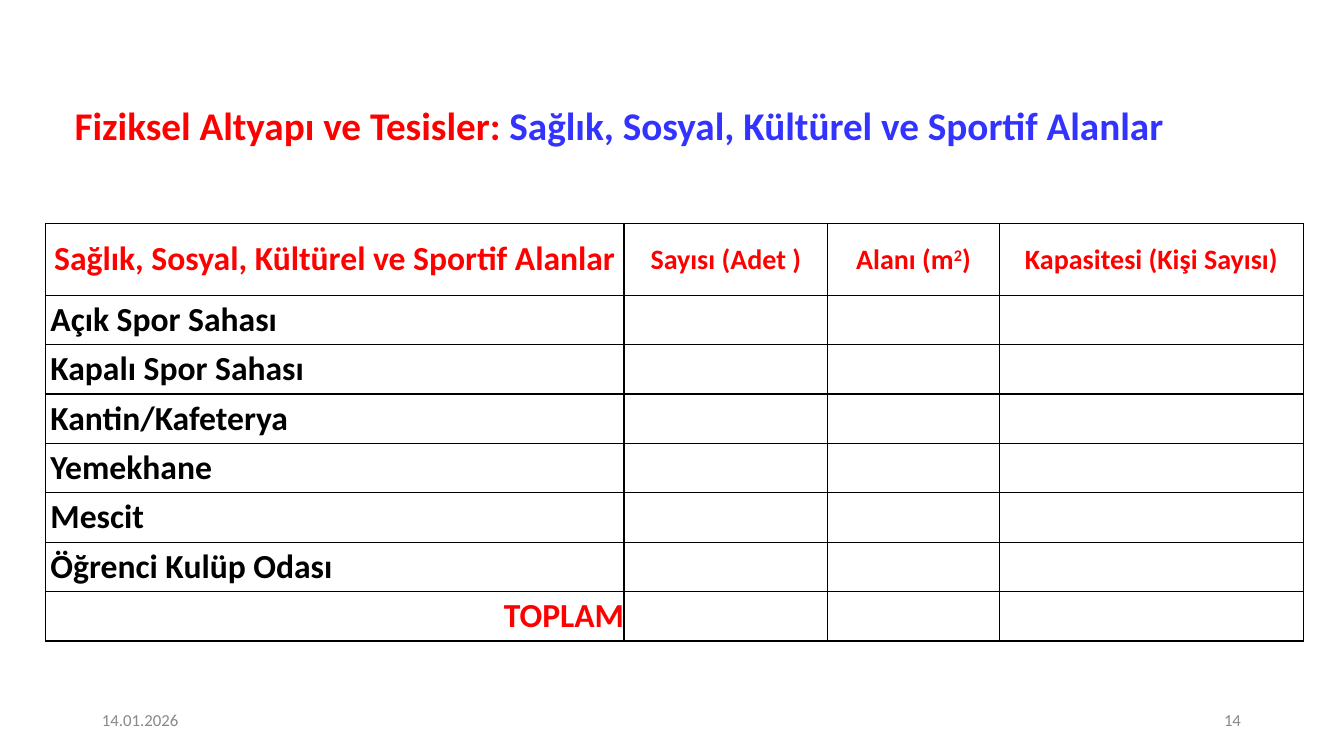
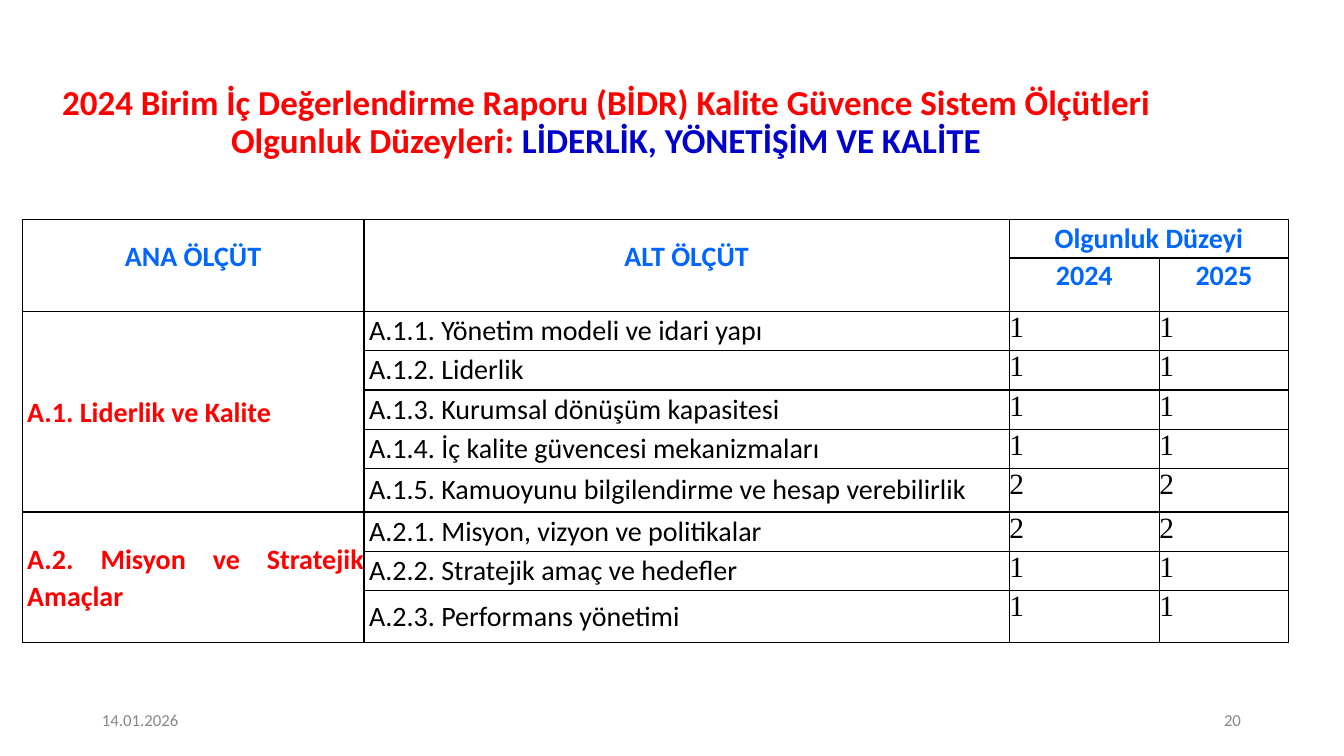
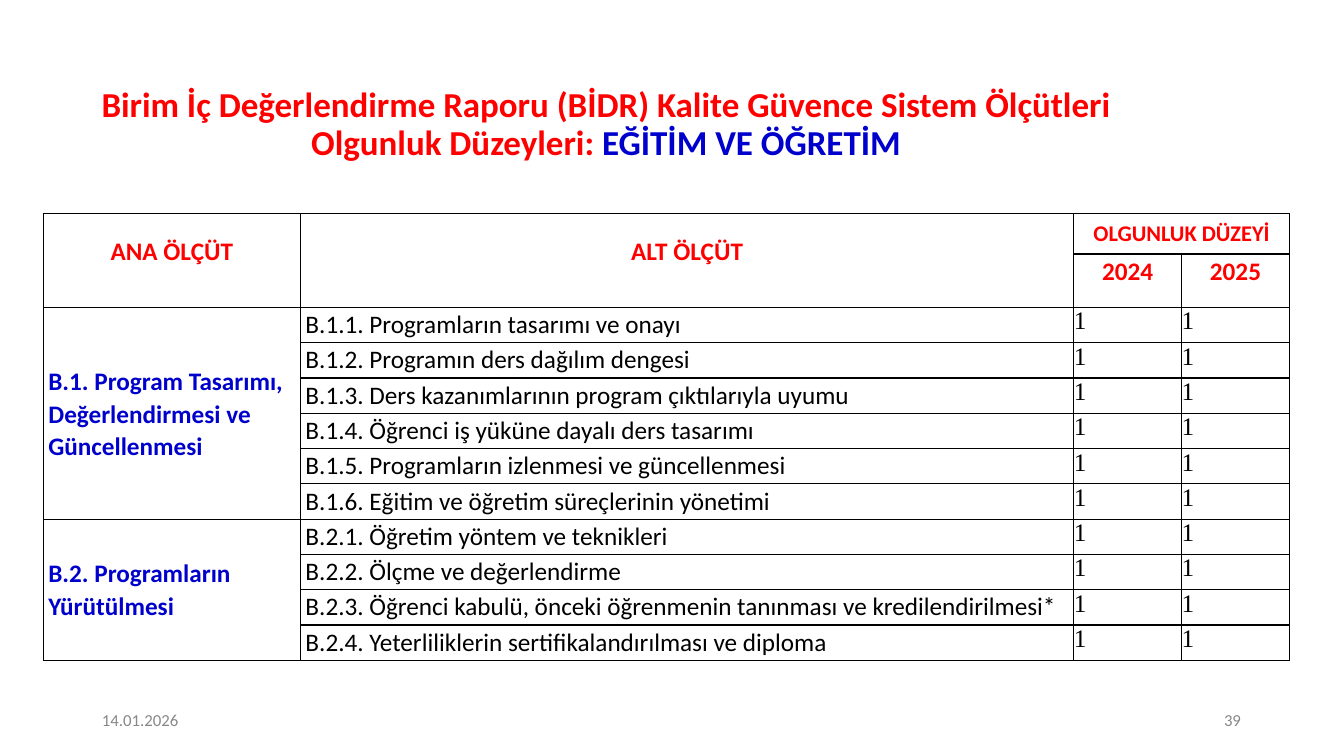
from lxml.etree import SubElement
from pptx import Presentation
from pptx.dml.color import RGBColor
from pptx.enum.text import MSO_ANCHOR, MSO_AUTO_SIZE, PP_ALIGN
from pptx.oxml.ns import qn
from pptx.util import Inches, Pt

RED = RGBColor(0xFF, 0x00, 0x00)
BLACK = RGBColor(0x00, 0x00, 0x00)
GRAY = RGBColor(0x88, 0x88, 0x88)
VIOLET_BLUE = RGBColor(0x33, 0x33, 0xFF)
NAVY = RGBColor(0x00, 0x00, 0xCC)
BRIGHT_BLUE = RGBColor(0x00, 0x66, 0xFF)

DATE = "14.01.2026"
SUPERSCRIPT = 26000

FACILITIES = {
    "number": "14",
    "title": [("Fiziksel Altyapı ve Tesisler: ", RED),
              ("Sağlık, Sosyal, Kültürel ve Sportif Alanlar", VIOLET_BLUE)],
    "origin": (0.45, 2.22),
    "widths": [5.74, 2.02, 1.7, 3.02],
    "headings": [
        ("Sağlık, Sosyal, Kültürel ve Sportif Alanlar", 24),
        ("Sayısı (Adet )", 20),
        ([("Alanı (m", RED), ("2", RED, SUPERSCRIPT), (")", RED)], 20),
        ("Kapasitesi (Kişi Sayısı)", 20),
    ],
    "areas": ["Açık Spor Sahası", "Kapalı Spor Sahası", "Kantin/Kafeterya",
              "Yemekhane", "Mescit", "Öğrenci Kulüp Odası"],
    "total": "TOPLAM",
}

MATURITY = [
    {
        "number": "20",
        "title": [("2024 Birim İç Değerlendirme Raporu (BİDR) Kalite Güvence "
                   "Sistem Ölçütleri Olgunluk Düzeyleri: ", RED),
                  ("LİDERLİK, YÖNETİŞİM VE KALİTE", NAVY)],
        "title_top": 0.3,
        "origin": (0.22, 2.18),
        "widths": [3.39, 6.4, 1.49, 1.28],
        "heights": [0.38, 0.53, 0.39, 0.39, 0.39, 0.39, 0.43, 0.39, 0.39, 0.52],
        "level_heading": ("Olgunluk Düzeyi", 20),
        "size": 20,
        "score_size": 21,
        "heading_color": BRIGHT_BLUE,
        "main_color": RED,
        "main_align": PP_ALIGN.JUSTIFY,
        "criteria": [
            ("A.1. Liderlik ve Kalite", [
                ("A.1.1. Yönetim modeli ve idari yapı", 1, 1),
                ("A.1.2. Liderlik", 1, 1),
                ("A.1.3. Kurumsal dönüşüm kapasitesi", 1, 1),
                ("A.1.4. İç kalite güvencesi mekanizmaları", 1, 1),
                ("A.1.5. Kamuoyunu bilgilendirme ve hesap verebilirlik", 2, 2),
            ]),
            ("A.2. Misyon ve Stratejik Amaçlar", [
                ("A.2.1. Misyon, vizyon ve politikalar", 2, 2),
                ("A.2.2. Stratejik amaç ve hedefler", 1, 1),
                ("A.2.3. Performans yönetimi", 1, 1),
            ]),
        ],
    },
    {
        "number": "39",
        "title": [("Birim İç Değerlendirme Raporu (BİDR) Kalite Güvence "
                   "Sistem Ölçütleri Olgunluk Düzeyleri: ", RED),
                  ("EĞİTİM VE ÖĞRETİM", NAVY)],
        "title_top": 0.32,
        "origin": (0.43, 2.12),
        "widths": [2.55, 7.67, 1.07, 1.07],
        "heights": [0.4, 0.53] + [0.35] * 10,
        "level_heading": ("OLGUNLUK DÜZEYİ", 16),
        "size": 18,
        "score_size": 18,
        "heading_color": RED,
        "main_color": NAVY,
        "main_align": PP_ALIGN.LEFT,
        "criteria": [
            ("B.1. Program Tasarımı, Değerlendirmesi ve Güncellenmesi", [
                ("B.1.1. Programların tasarımı ve onayı", 1, 1),
                ("B.1.2. Programın ders dağılım dengesi", 1, 1),
                ("B.1.3. Ders kazanımlarının program çıktılarıyla uyumu", 1, 1),
                ("B.1.4. Öğrenci iş yüküne dayalı ders tasarımı", 1, 1),
                ("B.1.5. Programların izlenmesi ve güncellenmesi", 1, 1),
                ("B.1.6. Eğitim ve öğretim süreçlerinin yönetimi", 1, 1),
            ]),
            ("B.2. Programların Yürütülmesi", [
                ("B.2.1. Öğretim yöntem ve teknikleri", 1, 1),
                ("B.2.2. Ölçme ve değerlendirme", 1, 1),
                ("B.2.3. Öğrenci kabulü, önceki öğrenmenin tanınması ve "
                 "kredilendirilmesi*", 1, 1),
                ("B.2.4. Yeterliliklerin sertifikalandırılması ve diploma", 1, 1),
            ]),
        ],
    },
]


def write(frame, text, size=20, color=BLACK, bold=False, font="Calibri",
          align=PP_ALIGN.LEFT, line=None):
    paragraph = frame.paragraphs[0]
    paragraph.alignment = align
    if line:
        paragraph.line_spacing = line
    pieces = [(text, color)] if isinstance(text, str) else text
    for words, shade, *raised in pieces:
        run = paragraph.add_run()
        run.text = words
        run.font.size = Pt(size)
        run.font.name = font
        run.font.bold = bold
        run.font.color.rgb = shade
        if raised:
            run.font._element.set("baseline", str(raised[0]))


def set_margins(owner, left=0, top=0, right=0, bottom=0):
    owner.margin_left = Inches(left)
    owner.margin_top = Inches(top)
    owner.margin_right = Inches(right)
    owner.margin_bottom = Inches(bottom)


def start_slide(deck, content, margins, **title_format):
    slide = deck.slides.add_slide(deck.slide_layouts[5])
    title = slide.shapes.title
    title.left, title.top = Inches(0.36), Inches(0.54)
    title.width, title.height = Inches(11.42), Inches(1.17)
    frame = title.text_frame
    frame.word_wrap = True
    frame.auto_size = MSO_AUTO_SIZE.NONE
    frame.vertical_anchor = MSO_ANCHOR.TOP
    set_margins(frame, **margins)
    write(frame, content["title"], bold=True, **title_format)
    for label, left, width, indent in [(DATE, 1, 0.79, 0.01),
                                       (content["number"], 12.1, 0.27, 0.04)]:
        footer = slide.shapes.add_textbox(Inches(left), Inches(7.07),
                                          Inches(width), Inches(0.2)).text_frame
        footer.word_wrap = True
        set_margins(footer, left=indent)
        write(footer, label, size=12, color=GRAY, line=Pt(12.4))
    return slide


def draw_borders(cell):
    properties = cell._tc.get_or_add_tcPr()
    for position, side in enumerate(("a:lnL", "a:lnR", "a:lnT", "a:lnB")):
        border = SubElement(properties, qn(side), w=str(Pt(1)))
        fill = SubElement(border, qn("a:solidFill"))
        SubElement(fill, qn("a:srgbClr"), val=str(BLACK))
        properties.insert(position, border)


def add_grid(slide, origin, widths, heights):
    left, top = origin
    table = slide.shapes.add_table(
        len(heights), len(widths), Inches(left), Inches(top),
        Inches(sum(widths)), Inches(sum(heights))).table
    table.first_row = table.horz_banding = False
    for column, width in zip(table.columns, widths):
        column.width = Inches(width)
    for row, height in zip(table.rows, heights):
        row.height = Inches(height)
    for cell in table.iter_cells():
        cell.fill.background()
        set_margins(cell)
        draw_borders(cell)
    return table


def fill_cell(cell, text, anchor=MSO_ANCHOR.MIDDLE, left=0, bottom=0, **text_format):
    cell.vertical_anchor = anchor
    set_margins(cell, left=left, bottom=bottom)
    write(cell.text_frame, text, **text_format)


def build_facilities(deck, content):
    slide = start_slide(deck, content, {"left": 0.38, "top": 0.46}, size=28)
    areas = content["areas"]
    heights = [0.71] + [0.49] * (len(areas) + 1)
    table = add_grid(slide, content["origin"], content["widths"], heights)
    for column, (heading, size) in enumerate(content["headings"]):
        fill_cell(table.cell(0, column), heading, size=size, color=RED,
                  bold=True, align=PP_ALIGN.CENTER)
    for row, area in enumerate(areas, 1):
        fill_cell(table.cell(row, 0), area, left=0.05, size=24, bold=True)
    fill_cell(table.cell(len(areas) + 1, 0), content["total"], size=24,
              color=RED, bold=True, align=PP_ALIGN.RIGHT)


def build_maturity(deck, content):
    slide = start_slide(
        deck, content,
        {"left": 0.15, "top": content["title_top"], "right": 0.27},
        size=25, align=PP_ALIGN.CENTER, line=Pt(27))
    table = add_grid(slide, content["origin"], content["widths"], content["heights"])
    size = content["size"]
    level, level_size = content["level_heading"]
    headings = [
        (0, 0, "ANA ÖLÇÜT", size, 0.17), (0, 1, "ALT ÖLÇÜT", size, 0.17),
        (0, 2, level, level_size, 0),
        (1, 2, "2024", size, 0.17), (1, 3, "2025", size, 0.17),
    ]
    for column in (0, 1):
        table.cell(0, column).merge(table.cell(1, column))
    table.cell(0, 2).merge(table.cell(0, 3))
    for row, column, heading, heading_size, bottom in headings:
        fill_cell(table.cell(row, column), heading, bottom=bottom,
                  size=heading_size, color=content["heading_color"],
                  bold=True, align=PP_ALIGN.CENTER)
    row = 2
    for main, subcriteria in content["criteria"]:
        main_cell = table.cell(row, 0)
        main_cell.merge(table.cell(row + len(subcriteria) - 1, 0))
        fill_cell(main_cell, main, left=0.05, size=size, bold=True, line=1.07,
                  color=content["main_color"], align=content["main_align"])
        for subcriterion, *scores in subcriteria:
            fill_cell(table.cell(row, 1), subcriterion, left=0.05, size=size)
            for column, score in enumerate(scores, 2):
                fill_cell(table.cell(row, column), str(score),
                          anchor=MSO_ANCHOR.TOP, size=content["score_size"],
                          font="Times New Roman")
            row += 1


def main():
    deck = Presentation()
    deck.slide_width, deck.slide_height = Inches(13.33), Inches(7.5)
    build_facilities(deck, FACILITIES)
    for content in MATURITY:
        build_maturity(deck, content)
    deck.save("out.pptx")


if __name__ == "__main__":
    main()
